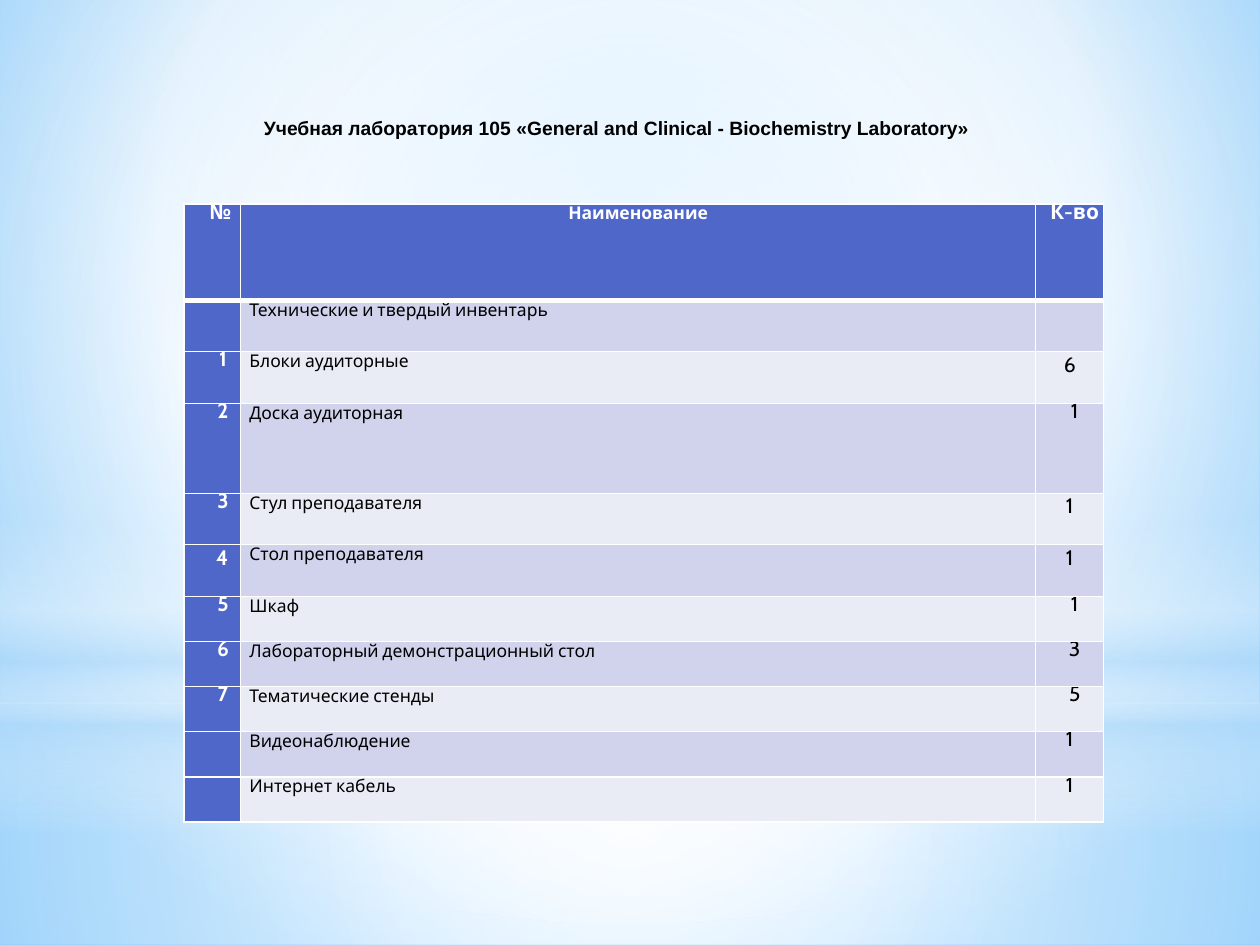
from lxml import etree
from pptx import Presentation
from pptx.dml.color import RGBColor
from pptx.enum import shapes, text
from pptx.oxml import ns
from pptx.util import Cm, Pt

COLORS = {
    "header": "4E67C8", "dark_band": "D0D3EB", "light_band": "E9EBF5",
    "white": "FFFFFF", "black": "000000", "haze": "B4DCFA",
    "sky": "9ED5FF", "deep_sky": "5BB9FF",
}
CENTER = (50, 50, 50, 50)
COLUMNS = (1.14, 16.03, 1.37)
ROWS = (
    ("№", "Наименование", "К-во", 1.95),
    ("", "Технические и твердый инвентарь", "", 1.03),
    ("1", "Блоки аудиторные", "6", 1.04),
    ("2", "Доска аудиторная", "1", 1.82),
    ("3", "Стул преподавателя", "1", 1.03),
    ("4", "Стол преподавателя", "1", 1.04),
    ("5", "Шкаф", "1", 0.91),
    ("6", "Лабораторный демонстрационный стол", "3", 0.91),
    ("7", "Тематические стенды", "5", 0.91),
    ("", "Видеонаблюдение", "1", 0.91),
    ("", "Интернет кабель", "1", 0.91),
)
NATURAL_SPACING = {(2, 2), (4, 2), (5, 2), (5, 0)}


def add_node(parent, tag, **attributes):
    node = etree.SubElement(parent, ns.qn(tag))
    for name, value in attributes.items():
        node.set(name, str(value))
    return node


def paint_gradient(element, stops, focus=None):
    solid = next(element.iter(ns.qn("a:solidFill")))
    gradient = etree.Element(ns.qn("a:gradFill"), rotWithShape="1")
    stop_list = add_node(gradient, "a:gsLst")
    for position, color, opacity in stops:
        stop = add_node(stop_list, "a:gs", pos=position * 1000)
        tone = add_node(stop, "a:srgbClr", val=COLORS[color])
        if opacity < 100:
            add_node(tone, "a:alpha", val=opacity * 1000)
    if focus:
        route = add_node(gradient, "a:path", path="circle")
        edges = {side: value * 1000 for side, value in zip("ltrb", focus)}
        add_node(route, "a:fillToRect", **edges)
    else:
        add_node(gradient, "a:lin", ang=90 * 60000, scaled=0)
    solid.getparent().replace(solid, gradient)


def add_glow(page, kind, box, stops, focus=None):
    shape = page.shapes.add_shape(kind, *map(Cm, box))
    shape.shadow.inherit = False
    shape.line.fill.background()
    shape.fill.solid()
    paint_gradient(shape._element, stops, focus)


def add_backdrop(page, box):
    left, top, width, height = box
    horizon = top + 0.744 * height
    page.background.fill.solid()
    paint_gradient(page._element, [(0, "sky", 100), (60, "white", 100),
                                   (100, "deep_sky", 100)], (20, 10, 20, 60))
    rectangle, oval = shapes.MSO_SHAPE.RECTANGLE, shapes.MSO_SHAPE.OVAL
    add_glow(page, rectangle, (left, horizon, width, top + height - horizon),
             [(0, "white", 91), (37, "white", 76), (100, "haze", 79)], CENTER)
    add_glow(page, rectangle, (left, top, width, horizon - top),
             [(0, "white", 89), (48, "white", 62), (100, "haze", 79)], CENTER)
    add_glow(page, rectangle, (left, top + 0.55 * height, width, height / 3),
             [(0, "white", 0), (29, "white", 30), (45, "haze", 40),
              (55, "white", 26), (65, "haze", 60), (100, "white", 0)])
    add_glow(page, oval, (left, top + 0.233 * height, width, 0.744 * height),
             [(0, "white", 100), (56, "white", 0)], CENTER)


def add_span(para, words, font, size, color, bold):
    span = para.add_run()
    span.text = words
    span.font.name = font
    span.font.size = Pt(size)
    span.font.bold = bold
    span.font.color.rgb = RGBColor.from_string(COLORS[color])


def indent(para, length):
    para._p.get_or_add_pPr().set("marL", str(Cm(length)))


def add_title(page, box):
    frame = page.shapes.add_textbox(*map(Cm, box)).text_frame
    frame.word_wrap = True
    para = frame.paragraphs[0]
    indent(para, 2.17)
    add_span(para, "Учебная лаборатория 105 «General and Clinical - Biochemistry Laboratory»",
             "Arial", 11, "black", True)


def draw_borders(cell, row):
    widths = {"L": 1, "R": 1, "T": 3 if row == 1 else 1, "B": 3 if row == 0 else 1}
    properties = cell._tc.get_or_add_tcPr()
    for index, (side, width) in enumerate(widths.items()):
        line = etree.Element(ns.qn("a:ln" + side), w=str(Pt(width)))
        add_node(add_node(line, "a:solidFill"), "a:srgbClr", val=COLORS["white"])
        properties.insert(index, line)


def fill_cell(cell, row, column, words):
    heading = row == 0 or column == 0
    band = "dark_band" if row % 2 else "light_band"
    cell.margin_left = cell.margin_right = cell.margin_top = cell.margin_bottom = 0
    cell.fill.solid()
    cell.fill.fore_color.rgb = RGBColor.from_string(COLORS["header" if heading else band])
    draw_borders(cell, row)
    if not words:
        return
    para = cell.text_frame.paragraphs[0]
    if row == 0 or column != 1:
        para.alignment = text.PP_ALIGN.CENTER
    if (row, column) not in NATURAL_SPACING:
        para.line_spacing = Pt(11.7)
        if column == 0:
            indent(para, 0.43 if row else 0.33)
        elif column == 1 and row:
            indent(para, 0.18)
        elif column == 2 and row < 9:
            indent(para, 0.2)
    elif column == 0:
        indent(para, 0.4)
    add_span(para, words, "Cabin", 10 if column == 1 else 12,
             "white" if heading else "black", heading)


def add_inventory(page, box):
    table = page.shapes.add_table(len(ROWS), len(COLUMNS), *map(Cm, box)).table
    table.horz_banding = False
    for column, width in zip(table.columns, COLUMNS):
        column.width = Cm(width)
    for row, (*entries, height) in enumerate(ROWS):
        table.rows[row].height = Cm(height)
        for column, words in enumerate(entries):
            fill_cell(table.cell(row, column), row, column, words)


def main():
    deck = Presentation()
    deck.slide_width, deck.slide_height = Cm(25.4), Cm(19.05)
    page = deck.slides.add_slide(deck.slide_layouts[6])
    add_backdrop(page, (0, 0, 25.4, 19.05))
    add_inventory(page, (3.71, 4.11, sum(COLUMNS), sum(row[-1] for row in ROWS)))
    add_title(page, (2.9, 2.21, 17.4, 1.5))
    deck.save("out.pptx")


if __name__ == "__main__":
    main()
